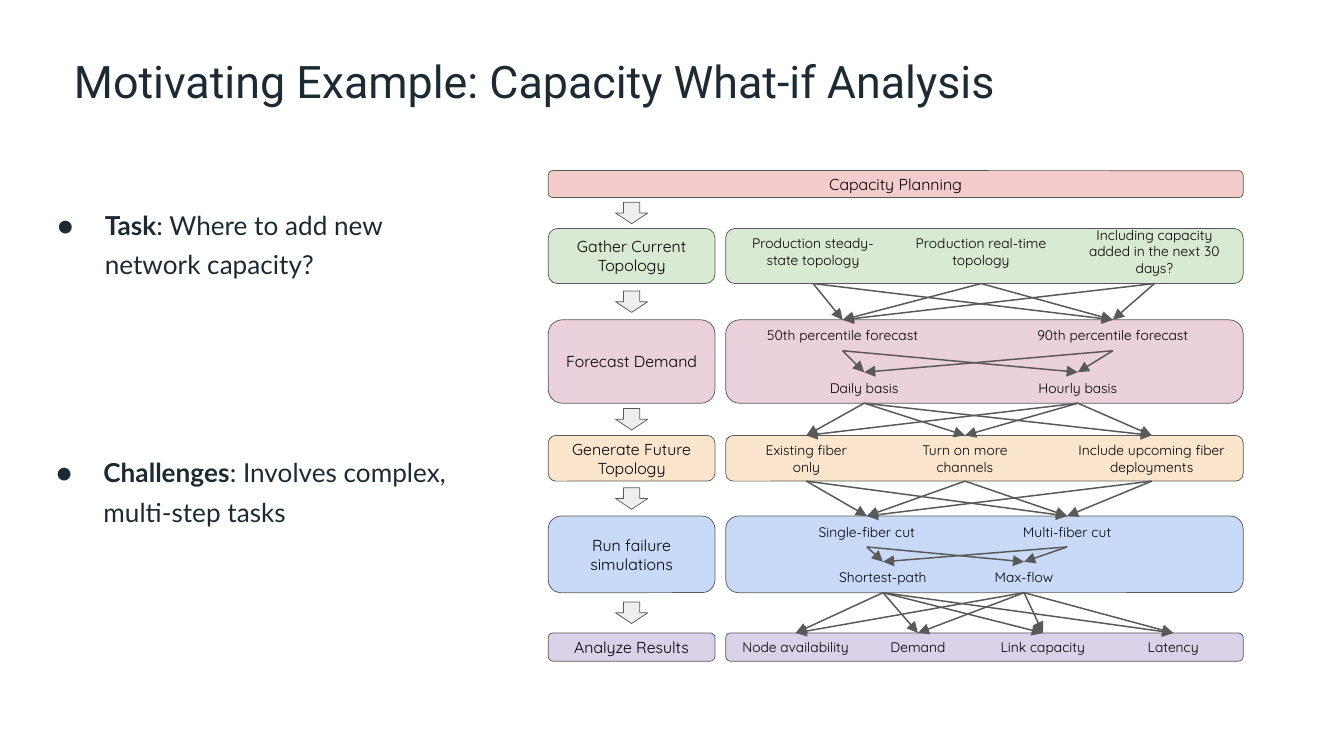
from itertools import product

from lxml import etree
from pptx import Presentation
from pptx.dml.color import RGBColor
from pptx.enum.shapes import MSO_CONNECTOR, MSO_SHAPE
from pptx.enum.text import MSO_ANCHOR, PP_ALIGN
from pptx.oxml.ns import qn
from pptx.util import Inches, Pt

ROUNDED = MSO_SHAPE.ROUNDED_RECTANGLE
DOWN_ARROW = MSO_SHAPE.DOWN_ARROW
STRAIGHT = MSO_CONNECTOR.STRAIGHT
CENTER, LEFT = PP_ALIGN.CENTER, PP_ALIGN.LEFT
MIDDLE, TOP = MSO_ANCHOR.MIDDLE, MSO_ANCHOR.TOP
BOTTOM_SIDE, TOP_SIDE = 2, 0

INK, BLACK, GRAY = "1C2B33", "000000", "595959"
STAGE_SIZE, LABEL_SIZE = 8.5, 7.4

# Stage: name, fill, top, height, label height, layers of (text, centre, width).
# Tops are relative to the diagram, centres to the option panel.
STAGES = [
    ("Gather Current Topology", "D9EAD3", 0.43, 0.41, 0.48, [
        [("Production steady-state topology", 0.65, 1.23),
         ("Production real-time topology", 1.9, 1.16),
         ("Including capacity added in the next 30 days?", 3.19, 1.29)]]),
    ("Forecast Demand", "EAD1DC", 1.11, 0.62, 0.23, [
        [("50th percentile forecast", 0.87, 1.45),
         ("90th percentile forecast", 2.88, 1.51)],
        [("Daily basis", 1.03, 1.03), ("Hourly basis", 2.62, 0.94)]]),
    ("Generate Future Topology", "FCE5CD", 1.97, 0.34, 0.34, [
        [("Existing fiber\nonly", 0.6, 1.11),
         ("Turn on more channels", 1.78, 1.16),
         ("Include upcoming fiber deployments", 3.17, 1.4)]]),
    ("Run failure simulations", "C9DAF8", 2.57, 0.57, 0.23, [
        [("Single-fiber cut", 1.05, 1.07), ("Multi-fiber cut", 2.54, 0.91)],
        [("Shortest-path", 1.17, 0.98), ("Max-flow", 2.22, 0.76)]]),
    ("Analyze Results", "D9D2E9", 3.44, 0.21, 0.21, [
        [("Node availability", 0.52, 1.07), ("Demand", 1.43, 0.76),
         ("Link capacity", 2.36, 0.76), ("Latency", 3.33, 0.76)]]),
]


def color(value):
    return RGBColor.from_string(value)


def prepare_frame(shape, inset, anchor):
    frame = shape.text_frame
    frame.word_wrap = True
    frame.vertical_anchor = anchor
    frame.margin_left = frame.margin_right = Inches(inset)
    frame.margin_top = frame.margin_bottom = Inches(inset)
    return frame


def add_run(paragraph, text, size, font, fill, bold=False):
    run = paragraph.add_run()
    run.text = text
    run.font.size = Pt(size)
    run.font.name = font
    run.font.bold = bold
    run.font.color.rgb = color(fill)


def add_text_box(slide, left, top, width, height):
    return slide.shapes.add_textbox(
        Inches(left), Inches(top), Inches(width), Inches(height))


def write_centered(shape, text, size):
    frame = prepare_frame(shape, 0.05, MIDDLE)
    for index, line in enumerate(text.split("\n")):
        paragraph = frame.add_paragraph() if index else frame.paragraphs[0]
        paragraph.alignment = CENTER
        add_run(paragraph, line, size, "Quicksand", BLACK)


def add_block(slide, kind, left, top, width, height, fill):
    shape = slide.shapes.add_shape(
        kind, Inches(left), Inches(top), Inches(width), Inches(height))
    shape.shadow.inherit = False
    shape.fill.solid()
    shape.fill.fore_color.rgb = color(fill)
    shape.line.color.rgb = color(GRAY)
    shape.line.width = Pt(0.4)
    return shape


def add_arrow(slide, source, target):
    connector = slide.shapes.add_connector(STRAIGHT, 0, 0, 0, 0)
    connector.begin_connect(source, BOTTOM_SIDE)
    connector.end_connect(target, TOP_SIDE)
    connector.line.color.rgb = color(GRAY)
    connector.line.width = Pt(0.8)
    line = connector.line._get_or_add_ln()
    etree.SubElement(line, qn("a:tailEnd"), type="triangle")
    etree.SubElement(connector._element.spPr, qn("a:effectLst"))


def add_title(slide, left, top, width, height):
    box = add_text_box(slide, left, top, width, height)
    paragraph = prepare_frame(box, 0, MIDDLE).paragraphs[0]
    paragraph.line_spacing = 1.15
    add_run(paragraph, "Motivating Example: Capacity What-if Analysis",
            24, "Roboto", INK)


def add_bullet(slide, left, top, width, height, lead, rest):
    box = add_text_box(slide, left, top, width, height)
    paragraph = prepare_frame(box, 0, TOP).paragraphs[0]
    properties = paragraph._p.get_or_add_pPr()
    properties.set("marL", str(Inches(0.5)))
    properties.set("indent", str(Inches(-0.35)))
    bullet_color = etree.SubElement(properties, qn("a:buClr"))
    etree.SubElement(bullet_color, qn("a:srgbClr"), val=INK)
    etree.SubElement(properties, qn("a:buSzPts"), val="1400")
    etree.SubElement(properties, qn("a:buFont"), typeface="Lato")
    etree.SubElement(properties, qn("a:buChar"), char="●")
    paragraph.alignment = LEFT
    paragraph.line_spacing = 1.25
    add_run(paragraph, lead, 14, "Lato", INK, bold=True)
    add_run(paragraph, rest, 14, "Lato", INK)


def add_labels(slide, panel_left, top, height, labels):
    boxes = []
    for text, center, width in labels:
        box = add_text_box(
            slide, panel_left + center - width / 2, top, width, height)
        write_centered(box, text, LABEL_SIZE)
        boxes.append(box)
    return boxes


def add_diagram(slide, left, top, width):
    stage_width, panel_offset, header_height = 1.24, 1.32, 0.2
    arrow_width, arrow_height = 0.24, 0.16
    panel_left = left + panel_offset

    # Header bar
    header = add_block(slide, ROUNDED, left, top, width, header_height, "F4CCCC")
    write_centered(header, "Capacity Planning", STAGE_SIZE)

    previous_bottom = top + header_height
    layers = []
    for name, fill, offset, height, label_height, label_rows in STAGES:
        stage_top = top + offset
        bottom = stage_top + height

        # Down arrow centred in the gap above the stage
        add_block(slide, DOWN_ARROW, left + (stage_width - arrow_width) / 2,
                  (previous_bottom + stage_top - arrow_height) / 2,
                  arrow_width, arrow_height, "EEEEEE")

        # Stage box and option panel
        stage = add_block(slide, ROUNDED, left, stage_top, stage_width, height, fill)
        write_centered(stage, name, STAGE_SIZE)
        add_block(slide, ROUNDED, panel_left, stage_top,
                  width - panel_offset, height, fill)

        # The last row of labels sits on the panel's bottom edge
        for labels in label_rows:
            is_last = labels is label_rows[-1]
            label_top = bottom - label_height if is_last else stage_top
            layers.append(
                add_labels(slide, panel_left, label_top, label_height, labels))
        previous_bottom = bottom

    # Every option leads to every option of the next layer
    for sources, targets in zip(layers, layers[1:]):
        for source, target in product(sources, targets):
            add_arrow(slide, source, target)


def main():
    presentation = Presentation()
    presentation.slide_width = Inches(10)
    presentation.slide_height = Inches(10 * 9 / 16)
    slide = presentation.slides.add_slide(presentation.slide_layouts[6])

    add_title(slide, 0.55, 0.34, 8.08, 0.46)
    add_bullet(slide, 0.28, 1.5, 3.2, 1.12,
               "Task", ": Where to add new network capacity?")
    add_bullet(slide, 0.27, 3.34, 3.2, 1.41,
               "Challenges", ": Involves complex, multi-step tasks")
    add_diagram(slide, 4.08, 1.27, 5.17)

    presentation.save("out.pptx")


if __name__ == "__main__":
    main()
